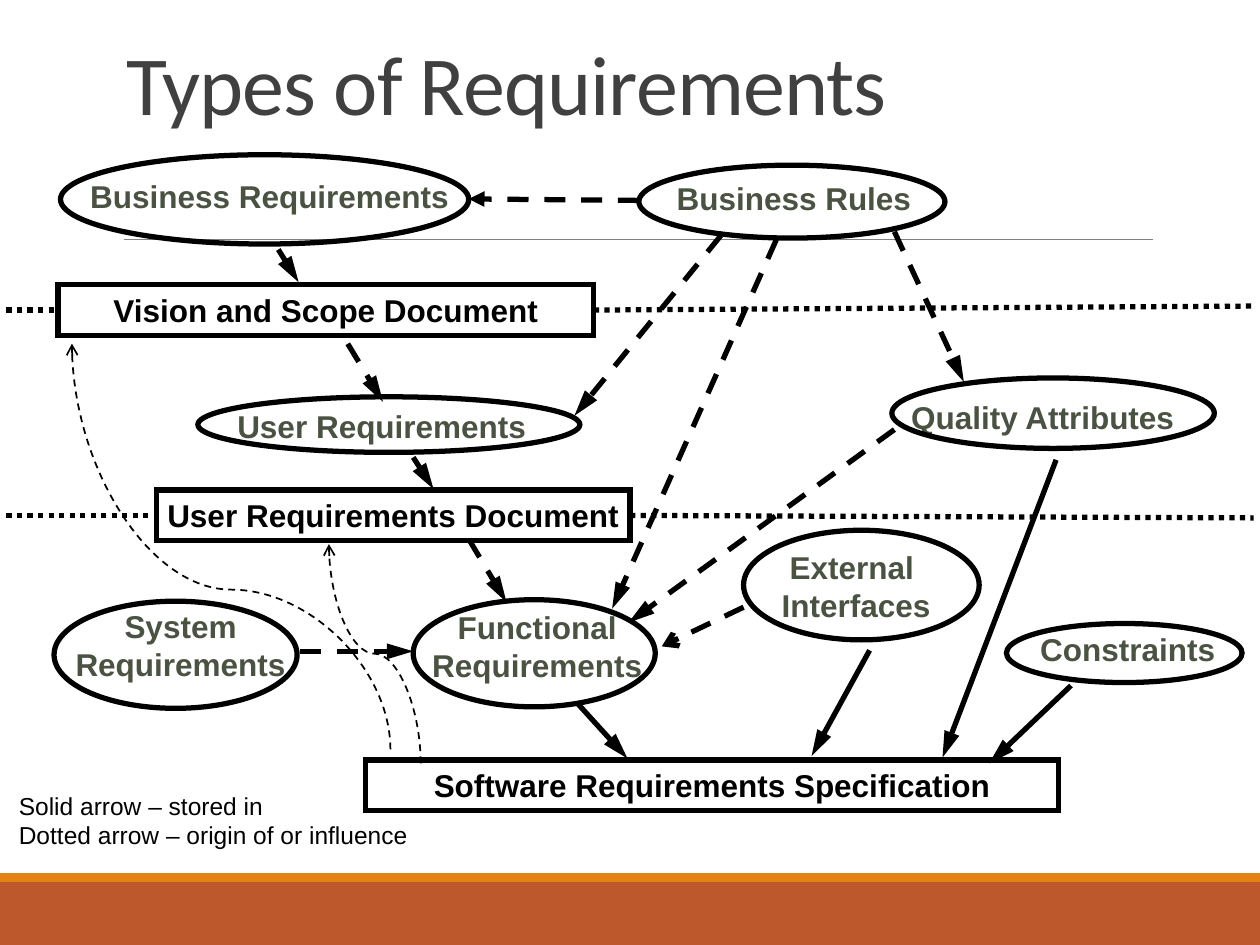
from lxml import etree
from pptx import Presentation
from pptx.dml.color import RGBColor
from pptx.enum.dml import MSO_LINE
from pptx.enum.shapes import MSO_CONNECTOR, MSO_SHAPE
from pptx.enum.text import MSO_ANCHOR, MSO_AUTO_SIZE, PP_ALIGN
from pptx.oxml.ns import qn
from pptx.util import Cm, Pt

RECT, OVAL = MSO_SHAPE.RECTANGLE, MSO_SHAPE.OVAL
LINE, CURVE = MSO_CONNECTOR.STRAIGHT, MSO_CONNECTOR.CURVE
DASH, DOT = MSO_LINE.DASH, MSO_LINE.ROUND_DOT
LEFT, MID = PP_ALIGN.LEFT, PP_ALIGN.CENTER
TOP, BOTTOM = MSO_ANCHOR.TOP, MSO_ANCHOR.BOTTOM
GROW, FIXED = MSO_AUTO_SIZE.SHAPE_TO_FIT_TEXT, MSO_AUTO_SIZE.NONE

COLORS = {"ink": "000000", "label": "4A5242", "title": "404040",
          "rule": "808080", "band": "BD582C", "stripe": "E48312"}

# Requirement kinds: text, label box, ellipse box, wrap
KINDS = [
    ("Business Requirements", (1.55, 3.45, 7.77, 1.02), (1.22, 3.12, 8.23, 1.8), False),
    ("User Requirements", (4.52, 8.08, 6.35, 1.02), (3.99, 8, 7.7, 1.12), False),
    ("System Requirements", (1.14, 12.12, 5, 1.78), (1.09, 12.12, 4.9, 2.16), True),
    ("Business Rules", (13.39, 3.48, 5.23, 1.02), (12.88, 3.33, 6.17, 1.47), False),
    ("Quality Attributes", (18.11, 7.9, 5.82, 1.02), (17.98, 7.62, 6.5, 1.42), False),
    ("External \nInterfaces", (15.52, 10.92, 3.48, 1.8), (14.99, 10.69, 4.75, 2.21), False),
    ("Constraints", (20.73, 12.57, 4.01, 1.02), (20.29, 12.57, 4.75, 1.19), False),
    ("Functional Requirements", (8.33, 12.14, 5, 1.78), (8.33, 12.09, 4.88, 2.16), True),
]

# Arrows: x and y of the start, x and y of the tip
STORED = [
    (5.61, 5.03, 6.02, 5.69), (8.33, 9.22, 8.74, 9.86),
    (11.66, 14.2, 12.65, 15.29), (21.59, 13.82, 19.94, 15.39),
    (21.29, 9.27, 19, 15.27), (17.53, 13.11, 16.36, 15.24),
]
ORIGIN = [
    (7.01, 6.93, 7.72, 8.1), (6.05, 13.13, 8.33, 13.13),
    (9.45, 10.87, 10.21, 12.14), (14.53, 4.75, 11.58, 8.38),
    (18.03, 8.66, 12.67, 12.55), (15.65, 4.83, 12.34, 12.27),
    (18.03, 4.67, 19.43, 7.7),
]


def color(name):
    return RGBColor.from_string(COLORS[name])


def write(frame, text, size=18, font="Arial", ink="ink", bold=False, align=MID,
          anchor=TOP, wrap=True, fit=FIXED, pad=0, space=None, track=None):
    frame.text = text
    frame.word_wrap = wrap
    frame.auto_size = fit
    frame.vertical_anchor = anchor
    frame.margin_left = frame.margin_right = Cm(pad)
    for para in frame.paragraphs:
        para.alignment = align
        if space:
            para.line_spacing = space
        for run in para.runs:
            face = run.font
            face.size, face.name, face.bold = Pt(size), font, bold
            face.color.rgb = color(ink)
            if track:
                run._r.get_or_add_rPr().set("spc", str(track))


def add_text(slide, box, text, **style):
    shape = slide.shapes.add_textbox(*map(Cm, box))
    write(shape.text_frame, text, fit=GROW, **style)


def add_form(slide, kind, box, fill=None, line=None):
    shape = slide.shapes.add_shape(kind, *map(Cm, box))
    shape.shadow.inherit = False
    if fill:
        shape.fill.solid()
        shape.fill.fore_color.rgb = color(fill)
    else:
        shape.fill.background()
    if line:
        shape.line.color.rgb = color(line)
        shape.line.width = Pt(3)
        edge = shape._element.spPr.find(qn("a:ln"))
        etree.SubElement(edge, qn("a:miter"), lim="800000")
    else:
        shape.line.fill.background()
    return shape


def add_line(slide, ends, kind=LINE, ink="ink", width=3, dash=None, tip=None, reach="med"):
    link = slide.shapes.add_connector(kind, *map(Cm, ends))
    link.line.color.rgb = color(ink)
    link.line.width = Pt(width)
    if dash:
        link.line.dash_style = dash
    props = link._element.spPr
    if tip:
        etree.SubElement(props.find(qn("a:ln")), qn("a:tailEnd"), type=tip, len=reach)
    etree.SubElement(props, qn("a:effectLst"))
    return link


def add_curve(slide, ends, bend):
    """Draw an S curve that leaves upward, as a connector turned by 270 degrees."""
    x1, y1, x2, y2 = ends
    mid_x, mid_y = (x1 + x2) / 2, (y1 + y2) / 2
    half_w, half_h = (y1 - y2) / 2, (x1 - x2) / 2
    flat = (mid_x - half_w, mid_y + half_h, mid_x + half_w, mid_y - half_h)
    link = add_line(slide, flat, CURVE, width=1, dash=DASH, tip="arrow")
    props = link._element.spPr
    props.find(qn("a:xfrm")).set("rot", str(270 * 60000))
    geom = props.find(qn("a:prstGeom"))
    guides = geom.find(qn("a:avLst"))
    if guides is None:
        guides = etree.SubElement(geom, qn("a:avLst"))
    etree.SubElement(guides, qn("a:gd"), name="adj1", fmla=f"val {bend}")


def add_level(slide, box, text, end_y=None):
    """Draw a document box, with a dotted level line on both sides if end_y is given."""
    form = add_form(slide, RECT, box, line="ink")
    write(form.text_frame, text, bold=True)
    if end_y:
        left, top, width, height = box
        mid = top + height / 2
        near = add_line(slide, (0.13, mid, left, mid), dash=DOT)
        near.end_connect(form, 1)
        far = add_line(slide, (left + width, mid, 25.27, end_y), dash=DOT)
        far.begin_connect(form, 3)


def main():
    deck = Presentation()
    deck.slide_width, deck.slide_height = Cm(25.4), Cm(19.05)
    slide = deck.slides.add_slide(deck.slide_layouts[5])

    # Footer bands and title rule
    add_form(slide, RECT, (0, 17.78, 25.4, 1.27), fill="band")
    add_form(slide, RECT, (0, 17.6, 25.4, 0.18), fill="stripe")
    add_line(slide, (2.49, 4.83, 23.24, 4.83), ink="rule", width=0.5)

    # Title
    title = slide.shapes.title
    title.left, title.top, title.width, title.height = map(Cm, (2.29, 0.79, 20.96, 2.01))
    write(title.text_frame, "Types of Requirements", size=48, font="Calibri", ink="title",
          align=LEFT, anchor=BOTTOM, pad=0.25, space=0.85, track=-50)

    # Requirement kinds
    for text, label, oval, wrap in KINDS:
        add_text(slide, label, text, ink="label", bold=True, wrap=wrap)
        add_form(slide, OVAL, oval, line="ink")

    # Documents
    add_level(slide, (1.17, 5.74, 10.8, 1.02), "Vision and Scope Document", 6.17)
    add_level(slide, (3.15, 9.88, 9.55, 1.02), "User Requirements Document", 10.44)
    add_level(slide, (7.37, 15.32, 13.97, 1.02), "Software Requirements Specification")

    # Arrows
    for ends in STORED:
        add_line(slide, ends, tip="triangle", reach="lg")
    for ends in ORIGIN:
        add_line(slide, ends, dash=DASH, tip="triangle", reach="lg")
    add_line(slide, (12.88, 4.04, 9.45, 4.01), dash=DASH, tip="triangle")
    add_line(slide, (14.99, 12.24, 13.34, 13.03), dash=DASH, tip="arrow")
    add_curve(slide, (7.87, 15.11, 1.45, 6.93), 39400)
    add_curve(slide, (8.48, 15.39, 6.63, 10.97), 50000)

    # Legend
    add_text(slide, (0.13, 15.82, 8.38, 1.45),
             "Solid arrow – stored in\nDotted arrow – origin of or influence",
             size=14, align=LEFT, wrap=False, pad=0.25)

    deck.save("out.pptx")


if __name__ == "__main__":
    main()
